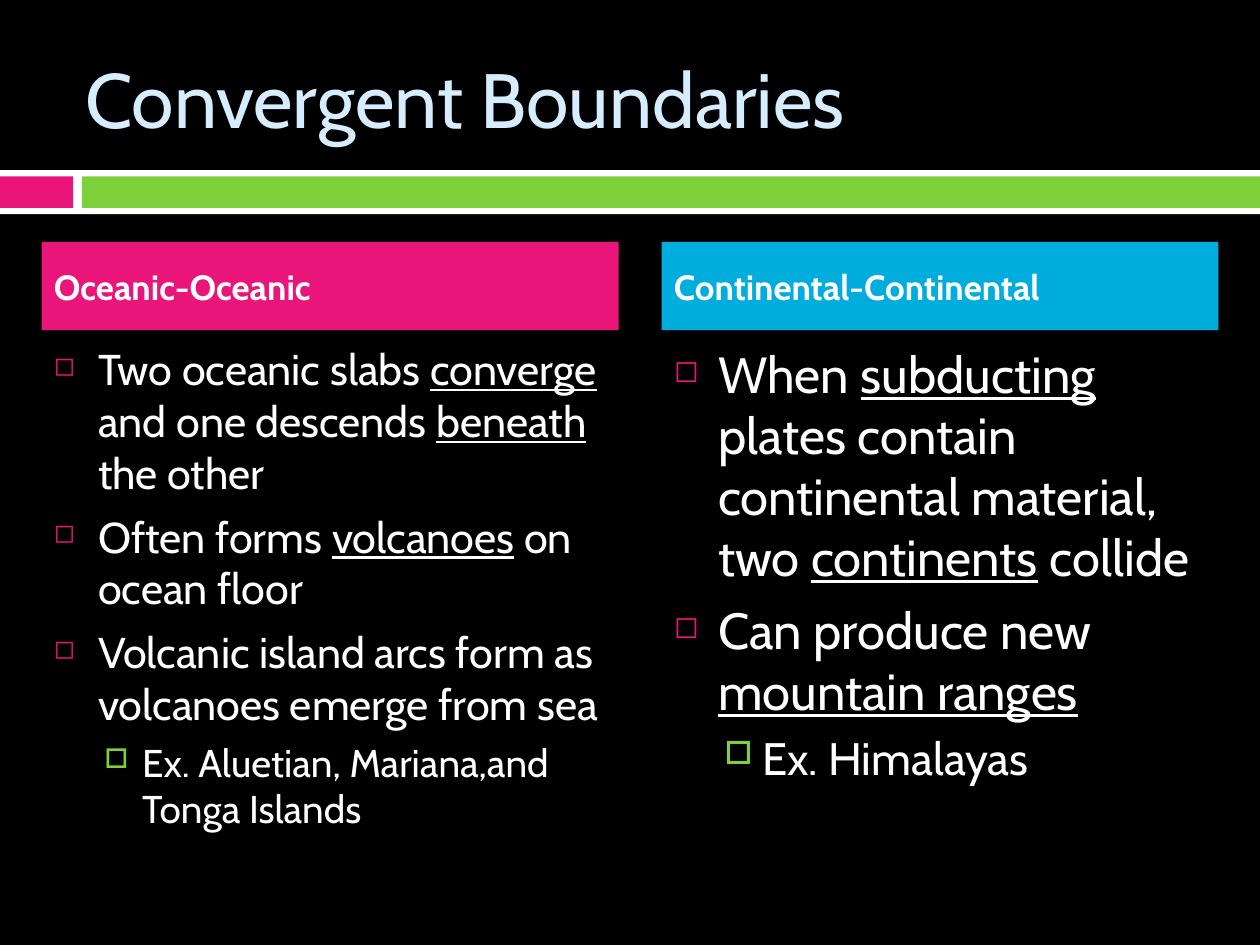
from lxml import etree
from pptx import Presentation
from pptx.dml.color import RGBColor
from pptx.enum.shapes import MSO_SHAPE
from pptx.enum.text import MSO_ANCHOR, PP_ALIGN
from pptx.oxml.ns import qn
from pptx.util import Inches, Pt

RECT = MSO_SHAPE.RECTANGLE
MIDDLE = MSO_ANCHOR.MIDDLE
TOP = MSO_ANCHOR.TOP
LEFT = PP_ALIGN.LEFT

BLACK = RGBColor(0x00, 0x00, 0x00)
WHITE = RGBColor(0xFF, 0xFF, 0xFF)
PINK = RGBColor(0xEA, 0x15, 0x7A)
GREEN = RGBColor(0x7F, 0xD1, 0x3B)
BLUE = RGBColor(0x00, 0xAD, 0xDC)
PALE_BLUE = RGBColor(0xD6, 0xEC, 0xFF)

# Per level: margin (in), hanging indent (in), space before, bullet, colour, size %
LEVELS = [
    (0.35, 0.35, 7, "◻", PINK, 60),
    (0.7, 0.3, 5.5, "□", GREEN, 70),
]


class SlideBuilder:
    font = "Cabin"

    def __init__(self, prs):
        self.slide = prs.slides.add_slide(prs.slide_layouts[6])
        fill = self.slide.background.fill
        fill.solid()
        fill.fore_color.rgb = BLACK

    def bar(self, x, y, w, h, color):
        sp = self.slide.shapes.add_shape(
            RECT, Inches(x), Inches(y), Inches(w), Inches(h))
        sp.fill.solid()
        sp.fill.fore_color.rgb = color
        sp.line.fill.background()
        sp.shadow.inherit = False
        return sp

    def textbox(self, x, y, w, h, anchor):
        sp = self.slide.shapes.add_textbox(
            Inches(x), Inches(y), Inches(w), Inches(h))
        tf = sp.text_frame
        tf.word_wrap = True
        tf.vertical_anchor = anchor
        return tf

    def run(self, p, text, size, color=WHITE, bold=False, underline=False):
        r = p.add_run()
        r.text = text
        r.font.name = self.font
        r.font.size = Pt(size)
        r.font.color.rgb = color
        r.font.bold = bold
        r.font.underline = underline

    def title(self, x, y, w, h, text):
        tf = self.textbox(x, y, w, h, MIDDLE)
        self.run(tf.paragraphs[0], text, 44, PALE_BLUE)

    def header(self, x, y, w, h, text, color):
        tf = self.bar(x, y, w, h, color).text_frame
        tf.word_wrap = True
        tf.vertical_anchor = MIDDLE
        p = tf.paragraphs[0]
        p.alignment = LEFT
        p.space_before = Pt(7)
        self.run(p, text, 20, bold=True)

    def bullet(self, p, level):
        margin, hang, before, char, color, percent = LEVELS[level]
        p.level = level
        p.space_before = Pt(before)
        pPr = p._p.get_or_add_pPr()
        pPr.set("marL", str(Inches(margin)))
        pPr.set("indent", str(-Inches(hang)))
        clr = etree.SubElement(pPr, qn("a:buClr"))
        etree.SubElement(clr, qn("a:srgbClr"), val=str(color))
        etree.SubElement(pPr, qn("a:buSzPct"), val=str(percent * 1000))
        etree.SubElement(pPr, qn("a:buChar"), char=char)

    def bullets(self, x, y, w, h, items, sizes):
        """Items are (level, text); words between underscores are underlined."""
        tf = self.textbox(x, y, w, h, TOP)
        for i, (level, text) in enumerate(items):
            p = tf.paragraphs[0] if i == 0 else tf.add_paragraph()
            self.bullet(p, level)
            for j, part in enumerate(text.split("_")):
                if part:
                    self.run(p, part, sizes[level], underline=j % 2 == 1)


def main():
    prs = Presentation()
    prs.slide_width, prs.slide_height = Inches(10), Inches(7.5)
    s = SlideBuilder(prs)

    # Banner
    s.bar(0, 1.35, 10, 0.35, WHITE)
    s.bar(0, 1.4, 0.58, 0.25, PINK)
    s.bar(0.65, 1.4, 9.35, 0.25, GREEN)

    # Title
    s.title(0.58, 0.3, 8.92, 0.95, "Convergent Boundaries")

    # Two columns: left, width, body height, colour, heading, sizes, items
    columns = [
        (0.33, 4.58, 4.42, PINK, "Oceanic-Oceanic", (24.6, 22.1), [
            (0, "Two oceanic slabs _converge_ and one descends _beneath_ the other"),
            (0, "Often forms _volcanoes_ on ocean floor"),
            (0, "Volcanic island arcs form as volcanoes emerge from sea"),
            (1, "Ex. Aluetian, Mariana,and Tonga Islands"),
        ]),
        (5.25, 4.42, 3.92, BLUE, "Continental-Continental", (29, 26), [
            (0, "When _subducting_ plates contain continental material, "
                "two _continents_ collide"),
            (0, "Can produce new _mountain ranges_"),
            (1, "Ex. Himalayas"),
        ]),
    ]
    for x, w, h, color, heading, sizes, items in columns:
        s.bullets(x, 2.67, w, h, items, sizes)
        s.header(x, 1.92, w, 0.7, heading, color)

    prs.save("out.pptx")


if __name__ == "__main__":
    main()
